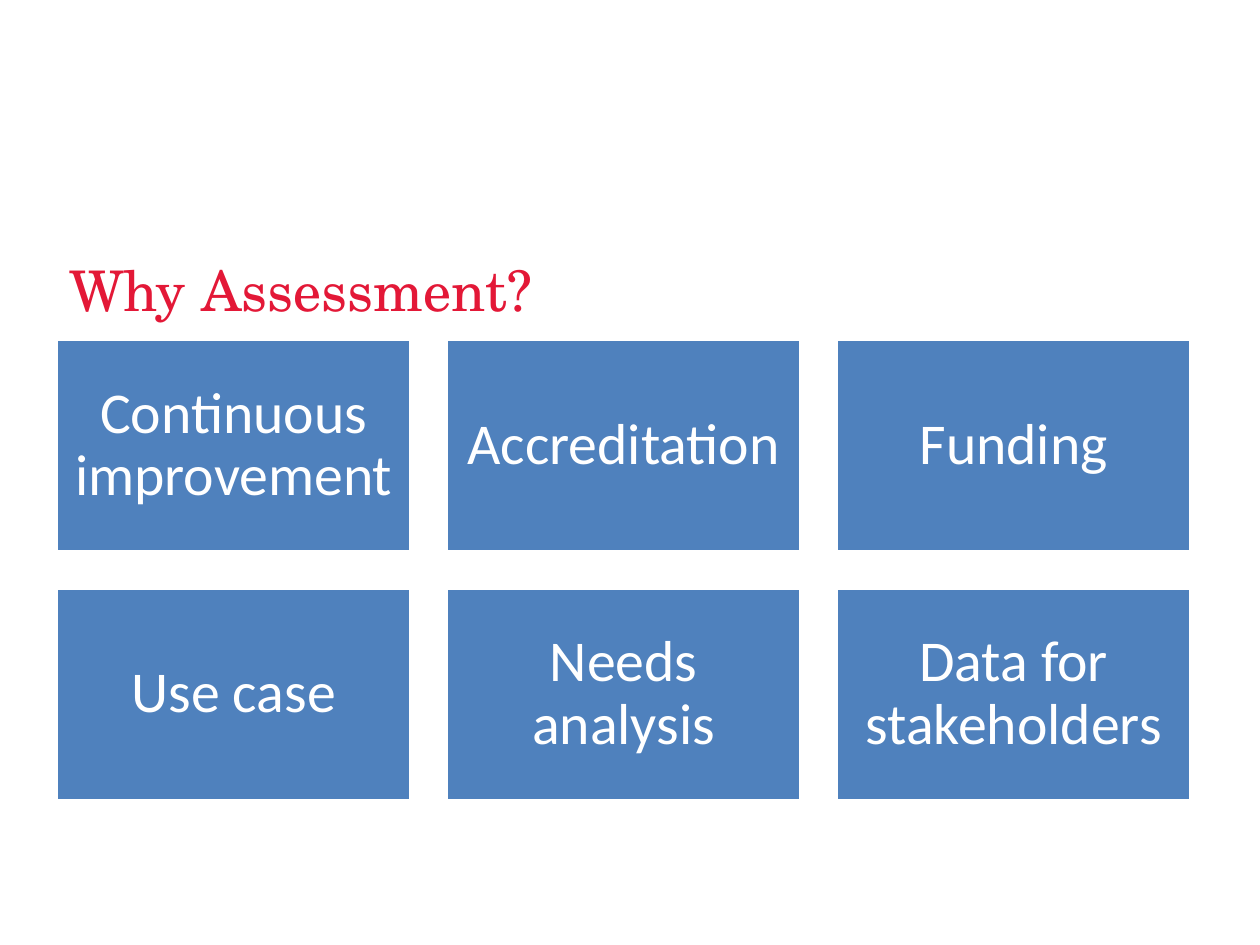
from pptx import Presentation
from pptx.dml.color import RGBColor
from pptx.enum.shapes import MSO_SHAPE as Shape
from pptx.enum.text import MSO_ANCHOR as Anchor, PP_ALIGN as Align
from pptx.util import Inches, Pt

RED = RGBColor(0xE3, 0x18, 0x37)
BLUE = RGBColor(0x4F, 0x81, 0xBD)
WHITE = RGBColor(0xFF, 0xFF, 0xFF)

REASONS = [
    ["Continuous improvement", "Accreditation", "Funding"],
    ["Use case", "Needs analysis", "Data for stakeholders"],
]


class Deck:
    """Hold the style, the card grid and the current slide."""

    left, top, span = 0.45, 2.69, 9
    wide, high = 2.81, 1.69
    gap = (span - 3 * wide) / 2
    pad = 0.14

    def __init__(self):
        self.prs = Presentation()
        self.prs.slide_width = Inches(10)
        self.prs.slide_height = Inches(7.5)
        self.slide = self.prs.slides.add_slide(self.prs.slide_layouts[6])

    def label(self, frame, text, face, size, color, anchor):
        frame.word_wrap = True
        frame.vertical_anchor = anchor
        para = frame.paragraphs[0]
        para.text = text
        para.font.name = face
        para.font.size = Pt(size)
        para.font.color.rgb = color
        return para

    def title(self, text):
        box = self.slide.shapes.add_textbox(
            Inches(self.left), Inches(1.8), Inches(self.span), Inches(0.81))
        self.label(box.text_frame, text, "TeX Gyre Schola", 32, RED, Anchor.BOTTOM)

    def card(self, col, row, text):
        box = self.slide.shapes.add_shape(
            Shape.RECTANGLE,
            Inches(self.left + col * (self.wide + self.gap)),
            Inches(self.top + row * (self.high + self.gap)),
            Inches(self.wide), Inches(self.high))
        box.shadow.inherit = False
        box.fill.solid()
        box.fill.fore_color.rgb = BLUE
        box.line.color.rgb = WHITE
        box.line.width = Pt(2)
        frame = box.text_frame
        frame.margin_left = frame.margin_right = Inches(self.pad)
        frame.margin_top = frame.margin_bottom = Inches(self.pad)
        para = self.label(frame, text, "Calibri", 33, WHITE, Anchor.MIDDLE)
        para.alignment = Align.CENTER
        para.line_spacing = 0.9

    def cards(self, grid):
        for row, line in enumerate(grid):
            for col, text in enumerate(line):
                self.card(col, row, text)


def main():
    deck = Deck()
    deck.title("Why Assessment?")
    deck.cards(REASONS)
    deck.prs.save("out.pptx")


if __name__ == "__main__":
    main()
